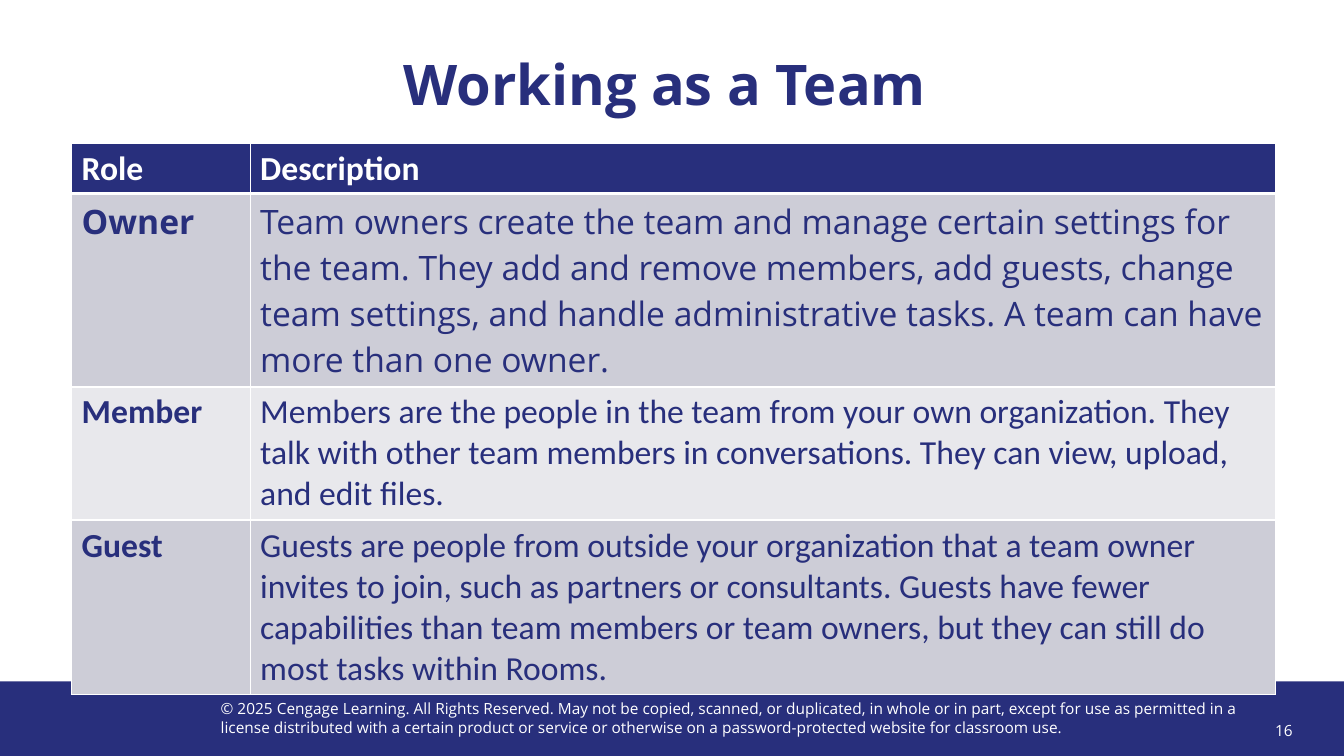
from dataclasses import dataclass

import pptx
import pptx.dml.color
import pptx.enum.shapes
import pptx.enum.text
import pptx.oxml
import pptx.oxml.ns
import pptx.util
from pptx.dml.color import RGBColor
from pptx.enum.text import MSO_ANCHOR, PP_ALIGN

NAVY = RGBColor(0x28, 0x2F, 0x7C)
WHITE = RGBColor(0xFF, 0xFF, 0xFF)
DARK_BAND = RGBColor(0xCD, 0xCD, 0xD7)
LIGHT_BAND = RGBColor(0xE8, 0xE8, 0xEC)
SLIDE_W = pptx.util.Inches(13.33)
SLIDE_H = pptx.util.Inches(7.5)


@dataclass
class Box:
    """A frame in percent of the slide's width and height."""
    left: float
    top: float
    width: float
    height: float

    def emu(self) -> tuple[int, int, int, int]:
        return (across(self.left), down(self.top),
                across(self.width), down(self.height))


@dataclass
class Label:
    text: str
    box: Box
    size: int
    color: RGBColor
    bold: bool = False
    align: PP_ALIGN = PP_ALIGN.LEFT
    anchor: MSO_ANCHOR = MSO_ANCHOR.TOP
    spacing: float = 1.0


@dataclass
class Row:
    role: str
    description: str
    height: float
    fill: RGBColor
    color: RGBColor = NAVY
    font: str = "Calibri"
    header: bool = False


def across(percent: float) -> int:
    return round(SLIDE_W * percent / 100)


def down(percent: float) -> int:
    return round(SLIDE_H * percent / 100)


def style(p, font: str, size: int, color: RGBColor, bold: bool) -> None:
    for r in p.runs:
        r.font.name = font
        r.font.size = pptx.util.Pt(size)
        r.font.color.rgb = color
        r.font.bold = bold


def add_label(s, label: Label) -> None:
    tf = s.shapes.add_textbox(*label.box.emu()).text_frame
    tf.word_wrap = True
    tf.vertical_anchor = label.anchor
    tf.text = label.text
    p = tf.paragraphs[0]
    p.alignment = label.align
    p.line_spacing = label.spacing
    style(p, "Open Sans", label.size, label.color, label.bold)


def add_borders(cell, top: int, bottom: int) -> None:
    tc_pr = cell._tc.get_or_add_tcPr()
    widths = {"lnL": 1, "lnR": 1, "lnT": top, "lnB": bottom}
    for i, (side, points) in enumerate(widths.items()):
        tc_pr.insert(i, pptx.oxml.parse_xml(
            f'<a:{side} {pptx.oxml.ns.nsdecls("a")} w="{pptx.util.Pt(points)}">'
            f'<a:solidFill><a:srgbClr val="{WHITE}"/></a:solidFill></a:{side}>'))


def add_roles(s, box: Box, columns: list[float], rows: list[Row]) -> None:
    table = s.shapes.add_table(len(rows), len(columns), *box.emu()).table
    for column, width in zip(table.columns, columns):
        column.width = across(width)
    for i, row in enumerate(rows):
        table.rows[i].height = down(row.height)
        for j, text in enumerate((row.role, row.description)):
            cell = table.cell(i, j)
            cell.text = text
            cell.fill.solid()
            cell.fill.fore_color.rgb = row.fill
            style(cell.text_frame.paragraphs[0], row.font, 24, row.color,
                  row.header or j == 0)
            after_header = i > 0 and rows[i - 1].header
            add_borders(cell, 3 if after_header else 1, 3 if row.header else 1)


FOOTER_BAR = Box(0, 90.13, 100, 9.87)
LABELS = [
    Label("© 2025 Cengage Learning. All Rights Reserved. May not be copied, "
          "scanned, or duplicated, in whole or in part, except for use as "
          "permitted in a license distributed with a certain product or service "
          "or otherwise on a password-protected website for classroom use.",
          Box(15.68, 91.87, 77.42, 6.27), 11, WHITE),
    Label("16", Box(90.92, 94, 6, 5.33), 11, WHITE,
          align=PP_ALIGN.RIGHT, anchor=MSO_ANCHOR.MIDDLE),
    Label("Working as a Team ", Box(3.9, 6.93, 92.2, 17.73), 40, NAVY, bold=True,
          align=PP_ALIGN.CENTER, spacing=0.9),
]
ROLE_COLUMNS = [13.28, 76.29]
ROLES = [
    Row("Role", "Description", 6.6, NAVY, WHITE, header=True),
    Row("Owner", "Team owners create the team and manage certain settings for "
        "the team. They add and remove members, add guests, change team "
        "settings, and handle administrative tasks. A team can have more than "
        "one owner.", 25.6, DARK_BAND, font="Open Sans"),
    Row("Member", "Members are the people in the team from your own "
        "organization. They talk with other team members in conversations. "
        "They can view, upload, and edit files.", 17.6, LIGHT_BAND),
    Row("Guest", "Guests are people from outside your organization that a team "
        "owner invites to join, such as partners or consultants. Guests have "
        "fewer capabilities than team members or team owners, but they can "
        "still do most tasks within Rooms.", 23.1, DARK_BAND),
]
ROLE_TABLE = Box(5.33, 18.93, sum(ROLE_COLUMNS), sum(row.height for row in ROLES))


def main() -> None:
    prs = pptx.Presentation()
    prs.slide_width, prs.slide_height = SLIDE_W, SLIDE_H
    s = prs.slides.add_slide(prs.slide_layouts[6])

    # Footer bar
    sp = s.shapes.add_shape(pptx.enum.shapes.MSO_SHAPE.RECTANGLE, *FOOTER_BAR.emu())
    sp.shadow.inherit = False
    sp.fill.solid()
    sp.fill.fore_color.rgb = NAVY
    sp.line.fill.background()

    # Footer texts and title
    for label in LABELS:
        add_label(s, label)

    # Table of roles
    add_roles(s, ROLE_TABLE, ROLE_COLUMNS, ROLES)
    prs.save("out.pptx")


if __name__ == "__main__":
    main()
